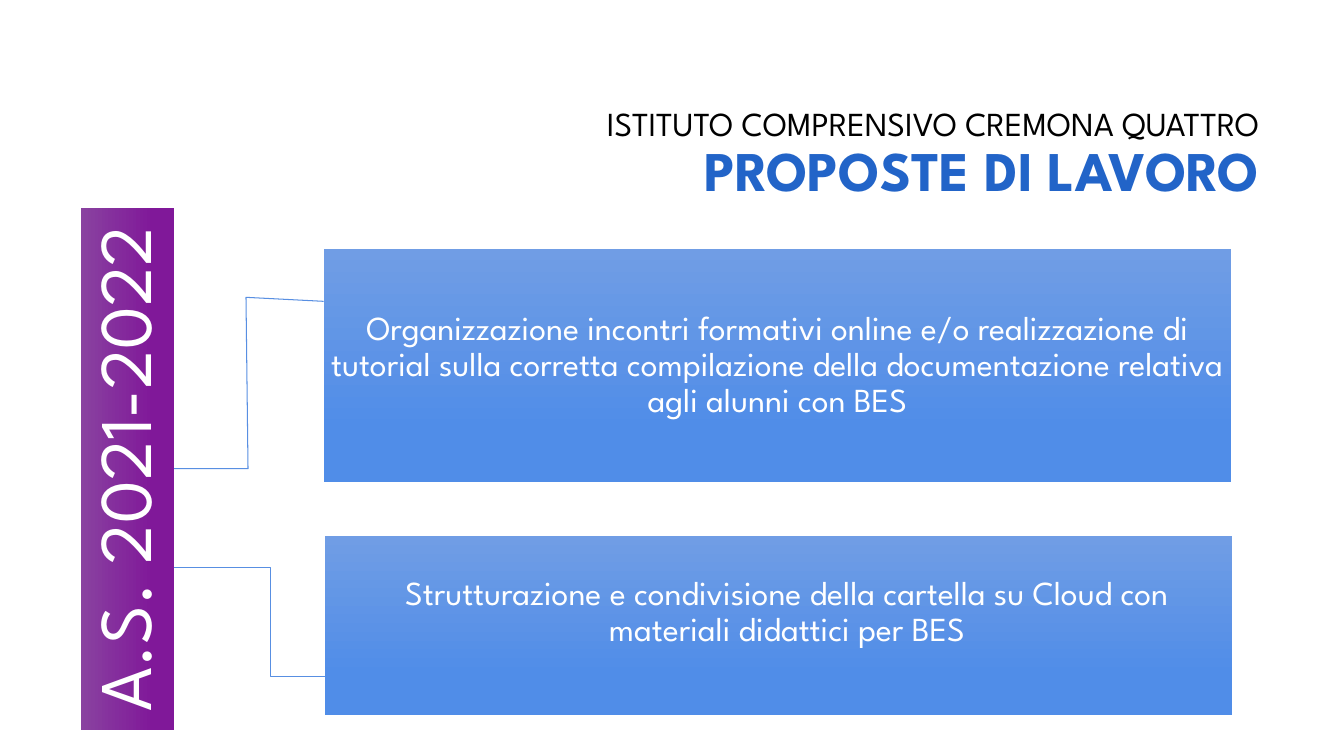
from pptx import Presentation
from pptx import util as u
from pptx.dml.color import RGBColor
from pptx.enum import shapes, text

FONT = "League Spartan"
BLACK = RGBColor(0x00, 0x00, 0x00)
WHITE = RGBColor(0xFF, 0xFF, 0xFF)
TITLE_BLUE = RGBColor(0x22, 0x64, 0xC8)
LINE_BLUE = RGBColor(0x58, 0x8F, 0xE2)
BLUES = (RGBColor(0x70, 0x9D, 0xE5), RGBColor(0x50, 0x8D, 0xE8))
PURPLES = (RGBColor(0x89, 0x42, 0xA0), RGBColor(0x80, 0x18, 0x99))


def add_span(para, words, size, color, bold=False):
    span = para.add_run()
    span.text = words
    span.font.name = FONT
    span.font.size = u.Pt(size)
    span.font.color.rgb = color
    span.font.bold = bold


def set_insets(frame, left, top, right, bottom):
    frame.margin_left = u.Inches(left)
    frame.margin_top = u.Inches(top)
    frame.margin_right = u.Inches(right)
    frame.margin_bottom = u.Inches(bottom)


def fill_title(page, box):
    title = page.shapes.title
    title.left, title.top, title.width, title.height = map(u.Inches, box)
    frame = title.text_frame
    frame.word_wrap = True
    frame.auto_size = text.MSO_AUTO_SIZE.NONE
    frame.vertical_anchor = text.MSO_ANCHOR.MIDDLE
    set_insets(frame, 0.1, 0.05, 0.1, 0.05)
    para = frame.paragraphs[0]
    para.alignment = text.PP_ALIGN.RIGHT
    para.line_spacing = 0.9
    add_span(para, "ISTITUTO COMPRENSIVO CREMONA QUATTRO", 24, BLACK)
    para.add_line_break()
    add_span(para, "PROPOSTE DI LAVORO", 40, TITLE_BLUE, bold=True)


def add_panel(page, box, colors, words, size, insets, rotation=0):
    panel = page.shapes.add_shape(shapes.MSO_SHAPE.RECTANGLE, *map(u.Inches, box))
    panel.rotation = rotation
    panel.shadow.inherit = False
    panel.line.fill.background()
    panel.fill.gradient()
    panel.fill.gradient_angle = 270
    for stop, position, color in zip(panel.fill.gradient_stops, (0, 0.78), colors):
        stop.position = position
        stop.color.rgb = color
    frame = panel.text_frame
    frame.word_wrap = True
    frame.vertical_anchor = text.MSO_ANCHOR.MIDDLE
    set_insets(frame, *insets)
    para = frame.paragraphs[0]
    para.alignment = text.PP_ALIGN.CENTER
    para.line_spacing = 0.9
    add_span(para, words, size, WHITE)


def add_branch(page, points):
    start, *others = [tuple(map(u.Inches, point)) for point in points]
    builder = page.shapes.build_freeform(*start)
    builder.add_line_segments(others, close=False)
    branch = builder.convert_to_shape()
    branch.shadow.inherit = False
    branch.fill.background()
    branch.line.color.rgb = LINE_BLUE
    branch.line.width = u.Pt(0.75)


def add_proposals(page, left, top):
    def shift(points):
        return [(left + x, top + y) for x, y in points]

    add_branch(page, shift([(0.92, 3.57), (1.88, 3.57), (1.88, 4.65), (2.59, 4.65)]))
    add_branch(page, shift([(0.92, 2.59), (1.66, 2.59), (1.64, 0.89), (2.41, 0.93)]))

    length, thickness = 5.18, 0.93
    offset = (length - thickness) / 2
    add_panel(page, (left - offset, top + offset, length, thickness), PURPLES,
              "A.S. 2021-2022", 53, (0.04, 0.04, 0.04, 0.04), rotation=270)
    add_panel(page, (left + 2.41, top + 0.41, 9, 2.31), BLUES,
              "Organizzazione incontri formativi online e/o realizzazione di tutorial "
              "sulla corretta compilazione della documentazione relativa agli alunni con BES",
              24, (0.02, 0.02, 0.02, 0.02))
    add_panel(page, (left + 2.42, top + 3.26, 9, 1.77), BLUES,
              "Strutturazione e condivisione della cartella su Cloud con materiali "
              "didattici per BES",
              24, (0.19, 0.02, 0.02, 0.27))


def main():
    deck = Presentation()
    deck.slide_width = u.Inches(13.33)
    deck.slide_height = u.Inches(7.5)
    page = deck.slides.add_slide(deck.slide_layouts[5])
    fill_title(page, (3.17, 0.84, 9.42, 1.41))
    add_proposals(page, 0.8, 2.06)
    deck.save("out.pptx")


if __name__ == "__main__":
    main()
